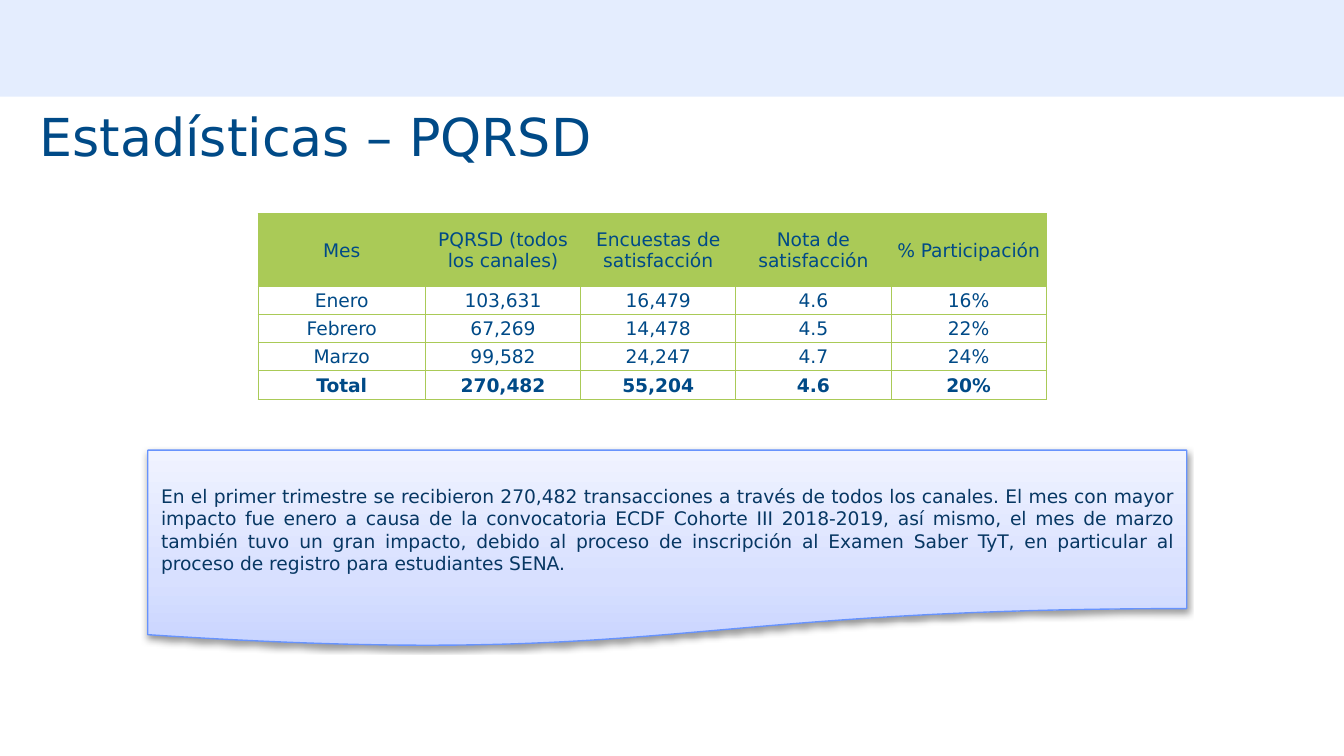
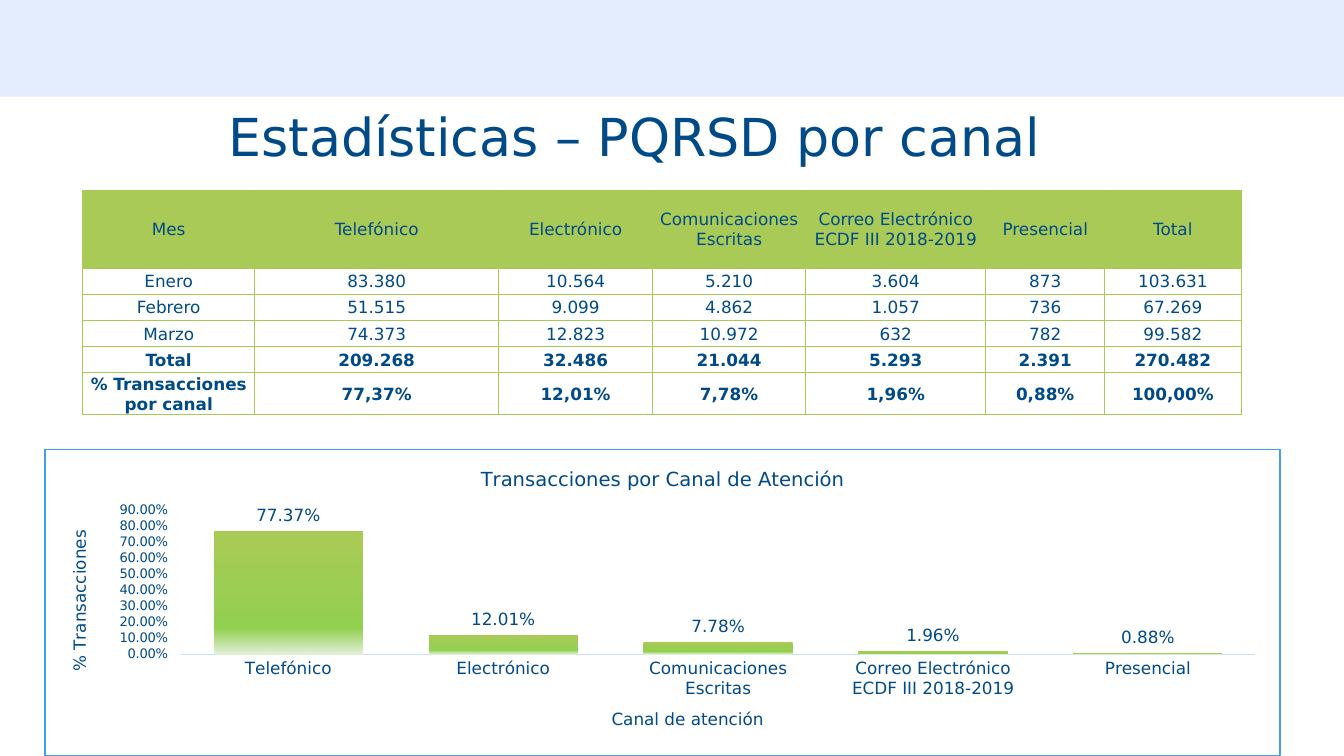
"""Builds two slides of quarterly PQRSD statistics with tables, a note and a chart."""
from lxml import etree
from pptx import Presentation
from pptx.chart.data import CategoryChartData
from pptx.dml.color import RGBColor
from pptx.enum.chart import XL_CHART_TYPE, XL_LABEL_POSITION, XL_TICK_MARK
from pptx.enum.shapes import MSO_SHAPE
from pptx.enum.text import MSO_ANCHOR, PP_ALIGN
from pptx.oxml import parse_xml
from pptx.oxml.ns import nsdecls, qn
from pptx.util import Pt

PX = 4572
FONT = "DejaVu Sans"
COLORS = {"band": "E4EDFE", "text": "004A87", "note_text": "073763", "note_line": "6793FD",
          "green": "AACA57", "white": "FFFFFF", "frame": "429EF2", "axis": "C6E2FB"}
NOTE_STOPS = [(0, "C8D4FF"), (35, "D8E0FF"), (100, "F0F3FF")]
BAR_STOPS = [(0, "AACA57"), (79, "92D050"), (100, "E2F0D9")]
LEFT, CENTER, JUSTIFY = PP_ALIGN.LEFT, PP_ALIGN.CENTER, PP_ALIGN.JUSTIFY
MIDDLE = MSO_ANCHOR.MIDDLE
RECTANGLE, DOCUMENT = MSO_SHAPE.RECTANGLE, MSO_SHAPE.FLOWCHART_DOCUMENT
COLUMNS = XL_CHART_TYPE.COLUMN_CLUSTERED
OUTSIDE_END = XL_LABEL_POSITION.OUTSIDE_END
TICK_NONE, TICK_OUT = XL_TICK_MARK.NONE, XL_TICK_MARK.OUTSIDE


def add_run(paragraph, text, size, color="text", bold=False):
    run = paragraph.add_run()
    run.text = text
    run.font.name = FONT
    run.font.size = Pt(size)
    run.font.bold = bold
    run.font.color.rgb = RGBColor.from_string(COLORS[color])


def set_gradient(properties, stops, angle):
    marks = "".join(f'<a:gs pos="{pos * 1000}"><a:srgbClr val="{color}"/></a:gs>'
                    for pos, color in stops)
    gradient = parse_xml(f'<a:gradFill {nsdecls("a")} rotWithShape="1"><a:gsLst>{marks}</a:gsLst>'
                         f'<a:lin ang="{angle * 60000}" scaled="0"/></a:gradFill>')
    properties.replace(properties.find(qn("a:solidFill")), gradient)


pages = [
    {"title": "Estadísticas – PQRSD", "align": LEFT, "at": (384, 318), "size": 10,
     "widths": [249, 231, 231, 231, 231], "heights": [108, 42, 42, 42, 42], "bold_from": 4,
     "rows": [
         ["Mes", "PQRSD (todos los canales)", "Encuestas de satisfacción",
          "Nota de satisfacción", "% Participación"],
         ["Enero", "103,631", "16,479", "4.6", "16%"],
         ["Febrero", "67,269", "14,478", "4.5", "22%"],
         ["Marzo", "99,582", "24,247", "4.7", "24%"],
         ["Total", "270,482", "55,204", "4.6", "20%"]]},
    {"title": "Estadísticas – PQRSD por canal", "align": CENTER, "at": (123, 283), "size": 9,
     "widths": [256, 363, 229, 228, 268, 177, 203], "heights": [116, 39, 39, 39, 39, 59],
     "bold_from": 4,
     "rows": [
         ["Mes", "Telefónico", "Electrónico", "Comunicaciones Escritas",
          "Correo Electrónico ECDF III 2018-2019", "Presencial", "Total"],
         ["Enero", "83.380", "10.564", "5.210", "3.604", "873", "103.631"],
         ["Febrero", "51.515", "9.099", "4.862", "1.057", "736", "67.269"],
         ["Marzo", "74.373", "12.823", "10.972", "632", "782", "99.582"],
         ["Total", "209.268", "32.486", "21.044", "5.293", "2.391", "270.482"],
         ["% Transacciones por canal", "77,37%", "12,01%", "7,78%", "1,96%", "0,88%",
          "100,00%"]]},
]

deck = Presentation()
deck.slide_width, deck.slide_height = 2000 * PX, 1125 * PX

for page in pages:
    slide = deck.slides.add_slide(deck.slide_layouts[6])
    band = slide.shapes.add_shape(RECTANGLE, 0, 0, 2000 * PX, 144 * PX)
    band.shadow.inherit = False
    band.fill.solid()
    band.fill.fore_color.rgb = RGBColor.from_string(COLORS["band"])
    band.line.fill.background()

    heading = slide.shapes.add_textbox(44 * PX, 153 * PX, 1800 * PX, 108 * PX).text_frame
    heading.word_wrap = True
    heading.vertical_anchor = MIDDLE
    heading.margin_left = heading.margin_right = 15 * PX
    heading.margin_top = heading.margin_bottom = 8 * PX
    heading.paragraphs[0].alignment = page["align"]
    heading.paragraphs[0].line_spacing = 0.9
    add_run(heading.paragraphs[0], page["title"], 28)

    left, top = page["at"]
    widths, heights = page["widths"], page["heights"]
    monthly = slide.shapes.add_table(len(heights), len(widths), left * PX, top * PX,
                                     sum(widths) * PX, sum(heights) * PX).table
    monthly.horz_banding = False
    for column, width in zip(monthly.columns, widths):
        column.width = width * PX
    for r, (height, values) in enumerate(zip(heights, page["rows"])):
        monthly.rows[r].height = height * PX
        for c, value in enumerate(values):
            cell = monthly.cell(r, c)
            cell.vertical_anchor = MIDDLE
            cell.margin_left = cell.margin_right = cell.margin_top = 2 * PX
            cell.margin_bottom = 0
            if r == 0:
                cell.fill.solid()
                cell.fill.fore_color.rgb = RGBColor.from_string(COLORS["green"])
            else:
                cell.fill.background()
            for position, side in enumerate(("lnL", "lnR", "lnT", "lnB")):
                border = parse_xml(
                    f'<a:{side} {nsdecls("a")} w="6350"><a:solidFill>'
                    f'<a:srgbClr val="{COLORS["green"]}"/></a:solidFill></a:{side}>')
                cell._tc.get_or_add_tcPr().insert(position, border)
            paragraph = cell.text_frame.paragraphs[0]
            paragraph.alignment = CENTER
            add_run(paragraph, value, page["size"], bold=r >= page["bold_from"])

summary_slide, channel_slide = deck.slides

note = summary_slide.shapes.add_shape(DOCUMENT, 220 * PX, 670 * PX, 1546 * PX, 294 * PX)
note.fill.solid()
set_gradient(note._element.spPr, NOTE_STOPS, 270)
note.line.color.rgb = RGBColor.from_string(COLORS["note_line"])
note.line.width = Pt(0.75)
note.shadow.inherit = False
note._element.spPr.find(qn("a:effectLst")).append(parse_xml(
    f'<a:outerShdw {nsdecls("a")} blurRad="{Pt(3.1)}" dist="{Pt(1.6)}" dir="5400000" '
    'rotWithShape="0"><a:srgbClr val="000000"><a:alpha val="38000"/></a:srgbClr></a:outerShdw>'))
note.text_frame.word_wrap = True
note.text_frame.vertical_anchor = MIDDLE
note.text_frame.paragraphs[0].alignment = JUSTIFY
add_run(note.text_frame.paragraphs[0],
        "En el primer trimestre se recibieron 270,482 transacciones a través de todos los canales. "
        "El mes con mayor impacto fue enero a causa de la convocatoria ECDF Cohorte III 2018-2019, "
        "así mismo, el mes de marzo también tuvo un gran impacto, debido al proceso de inscripción "
        "al Examen Saber TyT, en particular al proceso de registro para estudiantes SENA.",
        10, "note_text")

shares = CategoryChartData(number_format="0.00%")
shares.categories = pages[1]["rows"][0][1:-1]
shares.add_series("Series 1", [0.7737, 0.1201, 0.0778, 0.0196, 0.0088])
chart = channel_slide.shapes.add_chart(COLUMNS, 66 * PX, 668 * PX, 1840 * PX, 457 * PX,
                                       shares).chart
chart.has_legend = False
chart.font.name = FONT
chart.font.size = Pt(9)
chart.font.color.rgb = RGBColor.from_string(COLORS["text"])
chart.has_title = True
channels, percentages = chart.category_axis, chart.value_axis
for titled, text, size in ((chart.chart_title, "Transacciones por Canal de Atención", 10.5),
                           (channels.axis_title, "Canal de atención", 9),
                           (percentages.axis_title, "% Transacciones", 9)):
    add_run(titled.text_frame.paragraphs[0], text, size)
chart.chart_title.include_in_layout = False

for axis, size, tick in ((channels, 9, TICK_NONE), (percentages, 7, TICK_OUT)):
    axis.has_major_gridlines = False
    axis.major_tick_mark = tick
    axis.minor_tick_mark = TICK_NONE
    axis.tick_labels.font.name = FONT
    axis.tick_labels.font.size = Pt(size)
    axis.tick_labels.font.color.rgb = RGBColor.from_string(COLORS["text"])
channels.format.line.color.rgb = RGBColor.from_string(COLORS["axis"])
channels.format.line.width = Pt(0.75)
percentages.format.line.fill.background()
percentages.minimum_scale, percentages.maximum_scale, percentages.major_unit = 0, 0.9, 0.1
percentages.tick_labels.number_format = "0.00%"
percentages.tick_labels.number_format_is_linked = False

plot = chart.plots[0]
plot.gap_width = 44
plot.vary_by_categories = False
bars = plot.series[0]
bars.format.fill.solid()
set_gradient(bars._element.get_or_add_spPr(), BAR_STOPS, 90)
labels = bars.data_labels
labels.show_value = True
labels.position = OUTSIDE_END
labels.number_format = "0.00%"
labels.number_format_is_linked = False
labels.font.name = FONT
labels.font.size = Pt(9)
labels.font.color.rgb = RGBColor.from_string(COLORS["text"])

chart_root = chart._chartSpace
plot_area = chart_root.find(qn("c:chart")).find(qn("c:plotArea"))
for default_layout in plot_area.findall(qn("c:layout")):
    plot_area.remove(default_layout)
layout = etree.Element(qn("c:layout"))
manual = etree.SubElement(layout, qn("c:manualLayout"))
for tag, value in (("layoutTarget", "inner"), ("xMode", "edge"), ("yMode", "edge"),
                   ("x", "0.11"), ("y", "0.2"), ("w", "0.87"), ("h", "0.47")):
    etree.SubElement(manual, qn(f"c:{tag}")).set("val", value)
plot_area.insert(0, layout)
chart_root.find(qn("c:chart")).addnext(parse_xml(
    f'<c:spPr {nsdecls("c", "a")}><a:solidFill><a:srgbClr val="{COLORS["white"]}"/></a:solidFill>'
    f'<a:ln w="{Pt(0.75)}"><a:solidFill><a:srgbClr val="{COLORS["frame"]}"/></a:solidFill></a:ln>'
    '</c:spPr>'))

deck.save("out.pptx")
